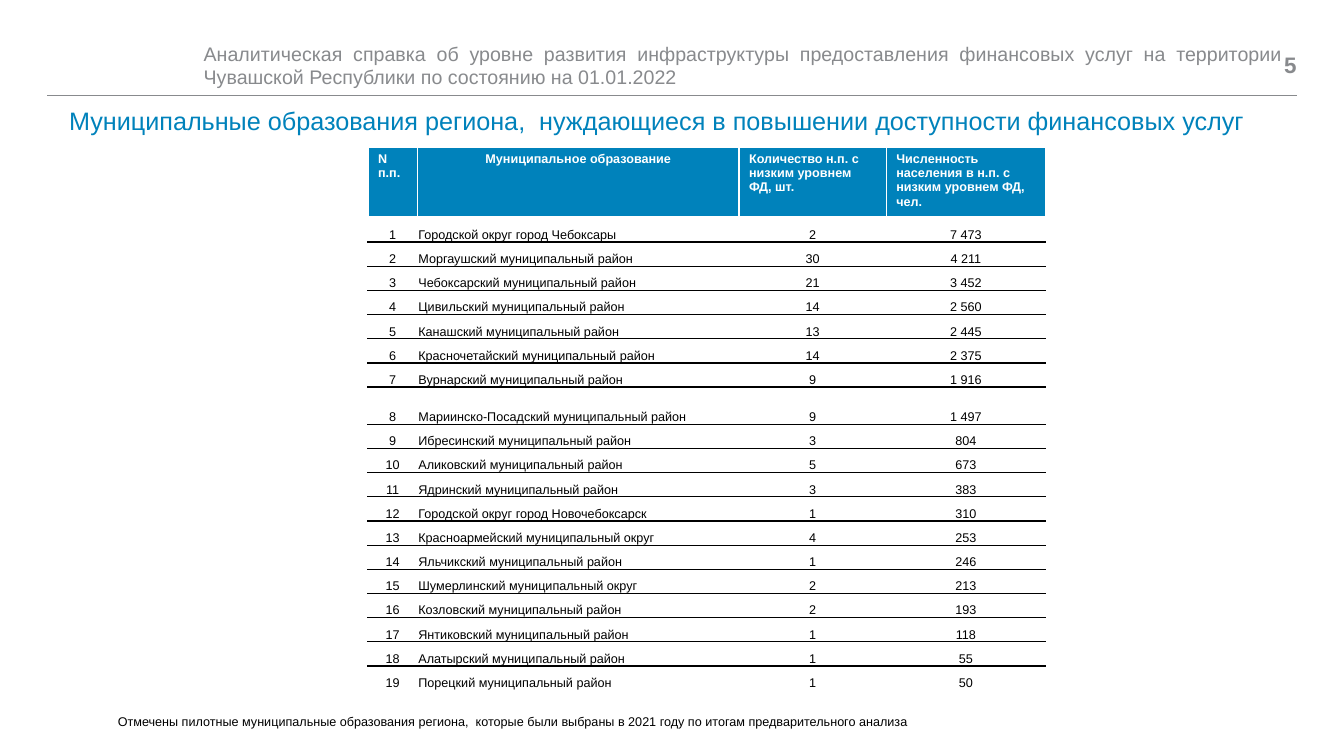
from pptx import Presentation
from pptx.dml.color import RGBColor
from pptx.enum.shapes import MSO_CONNECTOR
from pptx.enum.text import MSO_ANCHOR, PP_ALIGN
from pptx.oxml.ns import qn
from pptx.util import Inches, Pt
from lxml.etree import SubElement

COLORS = {"blue": "0082BB", "gray": "888A8D", "black": "000000", "white": "FFFFFF"}
FONT = "Arial"
HEADERS = ["N п.п.", "Муниципальное образование", "Количество н.п. с низким уровнем ФД, шт.",
           "Численность населения в н.п. с низким уровнем ФД, чел."]
COL_WIDTHS = [0.49, 3.19, 1.46, 1.58]
HEADER_HEIGHT, ROW_HEIGHT, TALL_ROW_HEIGHT = 0.69, 0.24, 0.37
TALL_ROW = 8
MUNICIPALITIES = [
    ("Городской округ город Чебоксары", "2", "7 473"),
    ("Моргаушский муниципальный район", "30", "4 211"),
    ("Чебоксарский муниципальный район", "21", "3 452"),
    ("Цивильский муниципальный район", "14", "2 560"),
    ("Канашский муниципальный район", "13", "2 445"),
    ("Красночетайский муниципальный район", "14", "2 375"),
    ("Вурнарский муниципальный район", "9", "1 916"),
    ("Мариинско-Посадский муниципальный район", "9", "1 497"),
    ("Ибресинский муниципальный район", "3", "804"),
    ("Аликовский муниципальный район", "5", "673"),
    ("Ядринский муниципальный район", "3", "383"),
    ("Городской округ город Новочебоксарск", "1", "310"),
    ("Красноармейский муниципальный округ", "4", "253"),
    ("Яльчикский муниципальный район", "1", "246"),
    ("Шумерлинский муниципальный округ", "2", "213"),
    ("Козловский муниципальный район", "2", "193"),
    ("Янтиковский муниципальный район", "1", "118"),
    ("Алатырский муниципальный район", "1", "55"),
    ("Порецкий муниципальный район", "1", "50"),
]


def rgb(name):
    return RGBColor.from_string(COLORS[name])


def set_text(tf, text, size, color, bold=False, align=PP_ALIGN.LEFT):
    p = tf.paragraphs[0]
    p.alignment = align
    r = p.add_run()
    r.text = text
    for name, value in {"name": FONT, "size": Pt(size), "bold": bold}.items():
        setattr(r.font, name, value)
    r.font.color.rgb = rgb(color)


def set_frame(tf, anchor, margins=(0, 0, 0, 0)):
    """Works on text frames and table cells alike."""
    tf.word_wrap = True
    tf.vertical_anchor = anchor
    for side, value in zip(("left", "top", "right", "bottom"), margins):
        setattr(tf, f"margin_{side}", Inches(value))


def add_text(s, box, text, size, color, anchor=MSO_ANCHOR.MIDDLE, margins=(0, 0, 0, 0), **style):
    tf = s.shapes.add_textbox(*map(Inches, box)).text_frame
    set_frame(tf, anchor, margins)
    set_text(tf, text, size, color, **style)


def add_header(s, left, top, width, height):
    right = left + width
    rule_y = top + height + 0.13
    rule = s.shapes.add_connector(MSO_CONNECTOR.STRAIGHT, Inches(left), Inches(rule_y),
                                  Inches(right), Inches(rule_y))
    rule.line.color.rgb = rgb("gray")
    rule.line.width = Pt(0.5)
    SubElement(rule._element.spPr, qn("a:effectLst"))
    add_text(s, (left + 1.55, top, 10.7, height),
             "Аналитическая справка об уровне развития инфраструктуры предоставления финансовых "
             "услуг на территории Чувашской Республики по состоянию на 01.01.2022",
             14, "gray", align=PP_ALIGN.JUSTIFY)
    add_text(s, (right - 0.81, top, 0.81, height), "5", 16, "gray", bold=True,
             align=PP_ALIGN.RIGHT)


def add_title(s, left, top, width, height):
    title = s.shapes.title
    for name, value in zip(("left", "top", "width", "height"), (left, top, width, height)):
        setattr(title, name, Inches(value))
    set_frame(title.text_frame, MSO_ANCHOR.TOP)
    set_text(title.text_frame,
             "Муниципальные образования региона,  нуждающиеся в повышении доступности "
             "финансовых услуг", 18, "blue", align=PP_ALIGN.CENTER)
    title.text_frame.paragraphs[0].line_spacing = 0.9


def set_borders(cell, top, bottom, bottom_width=1):
    tcPr = cell._tc.get_or_add_tcPr()
    borders = (("L", "white", 1), ("R", "white", 1), ("T", top, 1), ("B", bottom, bottom_width))
    for side, color, width in borders:
        ln = SubElement(tcPr, qn(f"a:ln{side}"), w=str(Pt(width)))
        SubElement(SubElement(ln, qn("a:solidFill")), qn("a:srgbClr"), val=COLORS[color])


def fill_cell(cell, color):
    cell.fill.solid()
    cell.fill.fore_color.rgb = rgb(color)


def add_municipality_table(s, left, top, width, height):
    last = len(MUNICIPALITIES)
    table = s.shapes.add_table(last + 1, len(HEADERS),
                               *map(Inches, (left, top, width, height))).table
    table.horz_banding = False
    for column, col_width in zip(table.columns, COL_WIDTHS):
        column.width = Inches(col_width)
    for i, row in enumerate(table.rows):
        row.height = Inches(ROW_HEIGHT if i != TALL_ROW else TALL_ROW_HEIGHT)
    table.rows[0].height = Inches(HEADER_HEIGHT)

    for j, text in enumerate(HEADERS):
        cell = table.cell(0, j)
        set_borders(cell, "white", "white", 3)
        fill_cell(cell, "blue")
        set_text(cell.text_frame, text, 9, "white", bold=True,
                 align=PP_ALIGN.CENTER if j == 1 else PP_ALIGN.LEFT)

    for i, values in enumerate(MUNICIPALITIES, 1):
        for j, text in enumerate((str(i), *values)):
            cell = table.cell(i, j)
            set_frame(cell, MSO_ANCHOR.BOTTOM, (0.01, 0.01, 0.01, 0))
            set_borders(cell, "white" if i == 1 else "black", "white" if i == last else "black")
            fill_cell(cell, "white")
            set_text(cell.text_frame, text, 9, "black",
                     align=PP_ALIGN.LEFT if j == 1 else PP_ALIGN.CENTER)


def add_footnote(s, *box):
    add_text(s, box,
             "Отмечены пилотные муниципальные образования региона,  которые были выбраны "
             "в 2021 году по итогам предварительного анализа",
             9, "black", anchor=MSO_ANCHOR.TOP, margins=(0.1, 0.05, 0.1, 0.05))


def main():
    prs = Presentation()
    prs.slide_width, prs.slide_height = Inches(13.33), Inches(7.5)
    s = prs.slides.add_slide(prs.slide_layouts[5])
    add_header(s, 0.47, 0.47, 12.39, 0.35)
    add_title(s, 0.35, 1.08, 12.33, 0.4)
    add_municipality_table(s, 3.65, 1.46, 6.73, 5.38)
    add_footnote(s, 1.07, 7.03, 12.26, 0.25)
    prs.save("out.pptx")


if __name__ == "__main__":
    main()
